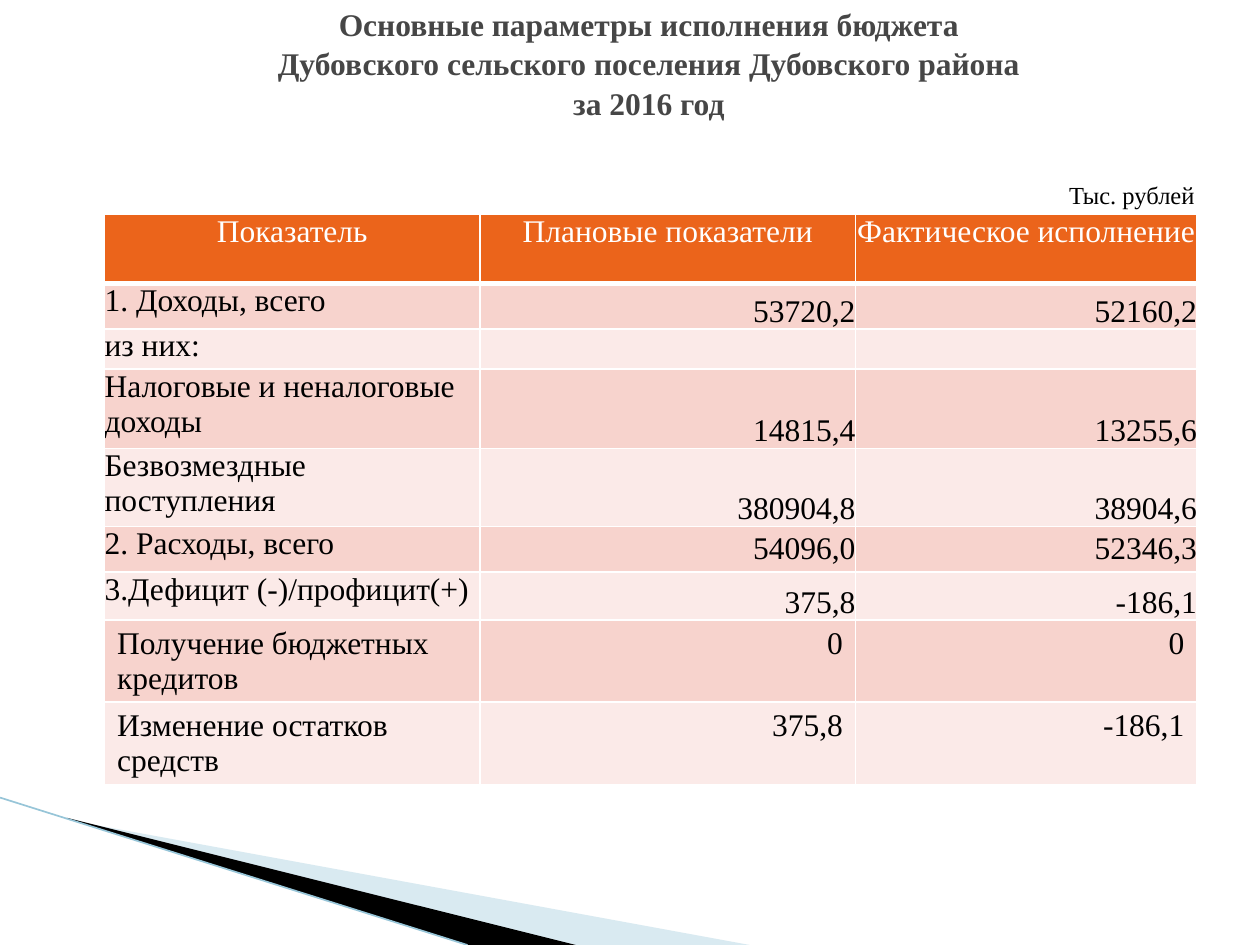
import pptx
import pptx.dml.color
import pptx.enum.shapes
import pptx.enum.text
import pptx.oxml
import pptx.oxml.ns
import pptx.util
from lxml import etree

COLORS = {
    "title": "464646", "text": "000000", "white": "FFFFFF",
    "header": "EB641B", "band_dark": "F7D3CD", "band_light": "FBEAE8",
    "wedge_blue": "A0CBDC", "wedge_black": "000000", "edge": "97C5D8",
}
ALIGN = pptx.enum.text.PP_ALIGN
ANCHOR = pptx.enum.text.MSO_ANCHOR
COLUMNS, ROWS = 100, 75

HEADER = ["Показатель", "Плановые показатели", "Фактическое исполнение"]
# label, plan, actual, row height, number anchor, padded cells
BUDGET = [
    ("1. Доходы, всего", "53720,2", "52160,2", 3.6, ANCHOR.BOTTOM, False),
    ("из них:", "", "", 3.2, ANCHOR.TOP, False),
    ("Налоговые и неналоговые доходы", "14815,4", "13255,6", 6.3, ANCHOR.BOTTOM, False),
    ("Безвозмездные поступления", "380904,8", "38904,6", 6.2, ANCHOR.BOTTOM, False),
    ("2. Расходы, всего", "54096,0", "52346,3", 3.6, ANCHOR.TOP, False),
    ("3.Дефицит (-)/профицит(+)", "375,8", "-186,1", 3.8, ANCHOR.BOTTOM, False),
    ("Получение бюджетных кредитов", "0", "0", 6.5, ANCHOR.TOP, True),
    ("Изменение остатков средств", "375,8", "-186,1", 6.5, ANCHOR.TOP, True),
]


def rgb(name):
    return pptx.dml.color.RGBColor.from_string(COLORS[name])


def write(tf, text, size=18, color="text", bold=False, align=ALIGN.LEFT, spacing=None):
    """Put one formatted paragraph into a text frame; newlines become line breaks."""
    tf.word_wrap = True
    p = tf.paragraphs[0]
    p.text = text.replace("\n", "\v")
    p.alignment = align
    if spacing:
        p.line_spacing = spacing
    fonts = [r.font for r in p.runs] or [p.font]
    for font in fonts:
        font.name = "Times New Roman"
        font.size = pptx.util.Pt(size)
        font.bold = bold
        font.color.rgb = rgb(color)


class Deck:
    """Holds the presentation, its current slide and the grid."""

    def __init__(self):
        self.prs = pptx.Presentation()
        self.prs.slide_width = pptx.util.Inches(10)
        self.prs.slide_height = pptx.util.Inches(7.5)
        self.s = self.prs.slides.add_slide(self.prs.slide_layouts[5])

    def x(self, columns):
        return round(self.prs.slide_width * columns / COLUMNS)

    def y(self, rows):
        return round(self.prs.slide_height * rows / ROWS)

    def box(self, left, top, width, height):
        return self.x(left), self.y(top), self.x(width), self.y(height)

    def title(self, text, *place):
        sp = self.s.shapes.title
        sp.left, sp.top, sp.width, sp.height = self.box(*place)
        sp.text_frame.auto_size = pptx.enum.text.MSO_AUTO_SIZE.NONE
        sp.text_frame.vertical_anchor = ANCHOR.MIDDLE
        write(sp.text_frame, text, color="title", bold=True,
              align=ALIGN.CENTER, spacing=1.05)

    def label(self, text, *place, **style):
        sp = self.s.shapes.add_textbox(*self.box(*place))
        write(sp.text_frame, text, **style)

    def wedge(self, points, color, opacity=None):
        points = [(self.x(c), self.y(r)) for c, r in points]
        builder = self.s.shapes.build_freeform(*points[0], scale=1.0)
        builder.add_line_segments(points[1:], close=True)
        sp = builder.convert_to_shape()
        sp.shadow.inherit = False
        sp.fill.solid()
        sp.fill.fore_color.rgb = rgb(color)
        sp.line.fill.background()
        if opacity:
            clr = sp.fill._xPr.find(".//" + pptx.oxml.ns.qn("a:srgbClr"))
            etree.SubElement(clr, pptx.oxml.ns.qn("a:alpha"), val=str(opacity * 1000))

    def line(self, x1, y1, x2, y2, color, weight):
        sp = self.s.shapes.add_connector(
            pptx.enum.shapes.MSO_CONNECTOR.STRAIGHT,
            self.x(x1), self.y(y1), self.x(x2), self.y(y2))
        sp.line.color.rgb = rgb(color)
        sp.line.width = pptx.util.Pt(weight)
        etree.SubElement(sp._element.spPr, pptx.oxml.ns.qn("a:effectLst"))

    def borders(self, cell, bottom=1):
        for side in "LRTB":
            weight = pptx.util.Pt(bottom if side == "B" else 1)
            cell._tc.get_or_add_tcPr().append(pptx.oxml.parse_xml(
                f'<a:ln{side} {pptx.oxml.ns.nsdecls("a")} w="{weight}"><a:solidFill>'
                f'<a:srgbClr val="{COLORS["white"]}"/></a:solidFill></a:ln{side}>'))

    def cell(self, cell, text, fill, padded=False, anchor=ANCHOR.TOP, bottom=1, **style):
        self.borders(cell, bottom)
        cell.fill.solid()
        cell.fill.fore_color.rgb = rgb(fill)
        if not padded:
            cell.margin_left = cell.margin_right = cell.margin_top = cell.margin_bottom = 0
        cell.vertical_anchor = anchor
        write(cell.text_frame, text, **style)

    def budget_table(self, left, top, widths, header_height):
        heights = [header_height] + [row[3] for row in BUDGET]
        table = self.s.shapes.add_table(
            len(heights), len(widths),
            *self.box(left, top, sum(widths), sum(heights))).table
        for column, width in zip(table.columns, widths):
            column.width = self.x(width)
        for row, height in zip(table.rows, heights):
            row.height = self.y(height)
        for i, text in enumerate(HEADER):
            self.cell(table.cell(0, i), text, "header", bottom=3,
                      color="white", align=ALIGN.CENTER)
        for n, (name, plan, actual, _, anchor, padded) in enumerate(BUDGET, 1):
            fill = "band_dark" if n % 2 else "band_light"
            self.cell(table.cell(n, 0), name, fill, padded)
            for i, value in enumerate((plan, actual), 1):
                self.cell(table.cell(n, i), value, fill, padded, anchor,
                          align=ALIGN.RIGHT,
                          spacing=1.15 if value and not padded else None)


def main():
    deck = Deck()
    deck.wedge([(5.5, 65.1), (59.5, 75), (45.6, 75), (5.5, 65)], "wedge_blue", opacity=40)
    deck.wedge([(5.3, 64.9), (45.7, 75), (37.2, 75), (5.4, 65)], "wedge_black")
    deck.line(0, 63.3, 37.1, 75, "edge", 0.95)
    deck.budget_table(8.3, 17, [29.8, 29.8, 27.1], 5.5)
    deck.title("Основные параметры исполнения бюджета\n"
               "Дубовского сельского поселения Дубовского района\n"
               "за 2016 год", 7.5, 0, 88, 9.9)
    deck.label("Тыс. рублей", 73.8, 13.8, 22, 3.4, size=14, align=ALIGN.RIGHT)
    deck.prs.save("out.pptx")


if __name__ == "__main__":
    main()
